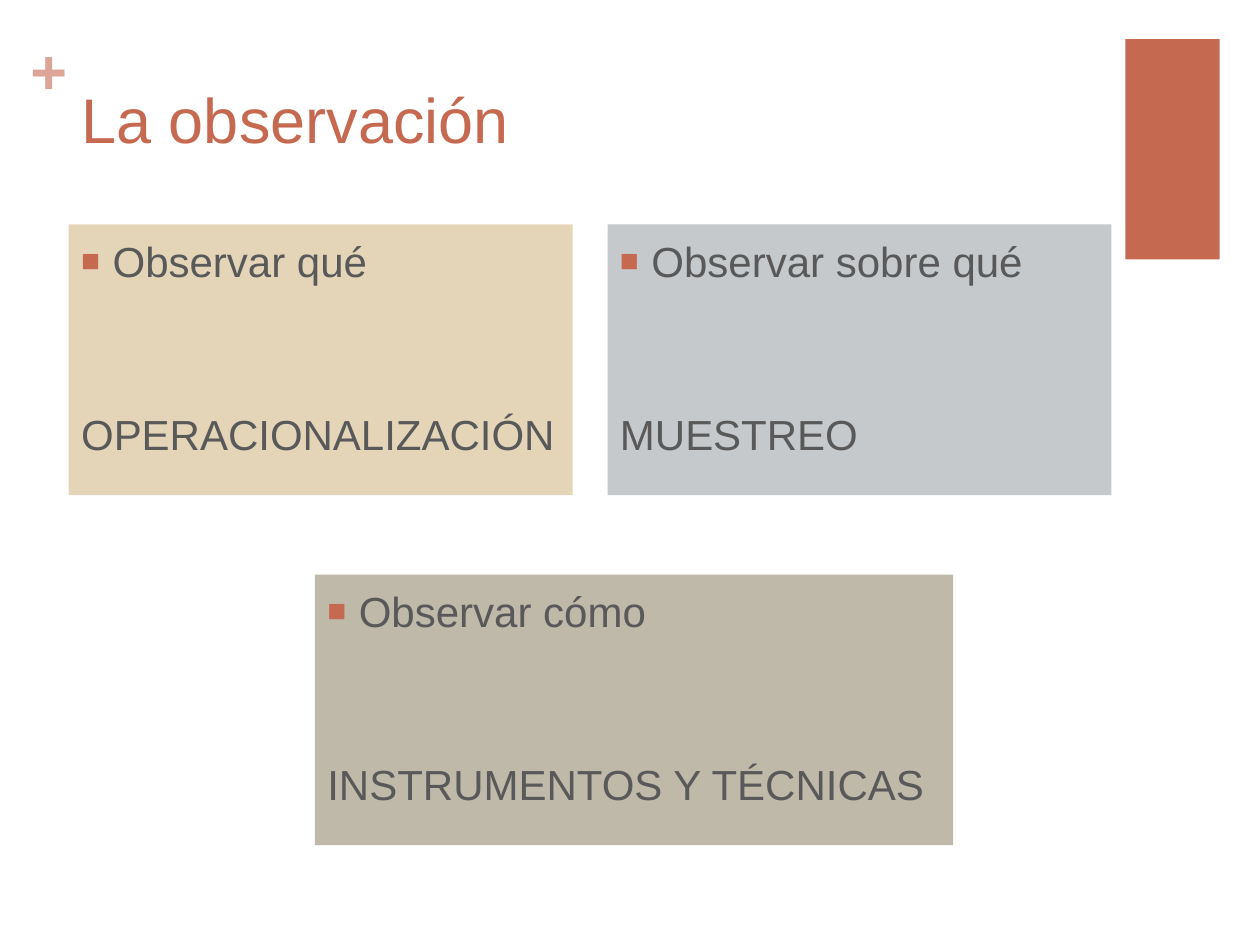
import pptx
import pptx.util
import pptx.dml.color
import pptx.enum.shapes
import pptx.enum.text
import pptx.oxml
import pptx.oxml.ns

Pt = pptx.util.Pt
FONT = "Arial"
COLORS = {
    "rust": "C66951",
    "pink": "DDA597",
    "gray": "595959",
    "sand": "E5D5B8",
    "steel": "C5C9CB",
    "stone": "BEB9A9",
}


def color(name):
    return pptx.dml.color.RGBColor.from_string(COLORS[name])


def add_run(para, text, size, tint, bold=False):
    run = para.add_run()
    run.text = text
    run.font.name = FONT
    run.font.size = Pt(size)
    run.font.bold = bold
    run.font.color.rgb = color(tint)


def add_label(slide, text, box, size, tint, inset, bold=False, spacing=1.0):
    frame = slide.shapes.add_textbox(*map(Pt, box)).text_frame
    frame.word_wrap = True
    frame.margin_left = frame.margin_right = Pt(2 * inset)
    frame.margin_top = frame.margin_bottom = Pt(inset)
    para = frame.paragraphs[0]
    para.line_spacing = spacing
    add_run(para, text, size, tint, bold)


def add_block(slide, box, tint):
    kind = pptx.enum.shapes.MSO_SHAPE.RECTANGLE
    shape = slide.shapes.add_shape(kind, *map(Pt, box))
    shape.shadow.inherit = False
    shape.fill.solid()
    shape.fill.fore_color.rgb = color(tint)
    shape.line.fill.background()
    return shape


def add_bullet(para):
    props = para._p.get_or_add_pPr()
    props.set("marL", str(Pt(18)))
    props.set("indent", str(Pt(-18)))
    space = pptx.oxml.ns.nsdecls("a")
    for mark in (
        f'<a:buClr {space}><a:srgbClr val="{COLORS["rust"]}"/></a:buClr>',
        f'<a:buSzPct {space} val="75000"/>',
        f'<a:buFont {space} typeface="{FONT}"/>',
        f'<a:buChar {space} char="■"/>',
    ):
        props.append(pptx.oxml.parse_xml(mark))


def add_card(slide, box, tint, topic, method):
    frame = add_block(slide, box, tint).text_frame
    frame.word_wrap = True
    frame.vertical_anchor = pptx.enum.text.MSO_ANCHOR.TOP
    head, foot = frame.paragraphs[0], frame.add_paragraph()
    for para, text in ((head, topic), (foot, method)):
        para.alignment = pptx.enum.text.PP_ALIGN.LEFT
        para.line_spacing = 1.1
        add_run(para, text, 24, "gray")
    foot.space_before = Pt(67.3)
    add_bullet(head)


def main():
    deck = pptx.Presentation()
    deck.slide_width, deck.slide_height = Pt(720), Pt(540)
    slide = deck.slides.add_slide(deck.slide_layouts[6])

    add_block(slide, (643, 22.3, 54, 126), "rust")
    add_label(slide, "+", (17.3, 18, 21, 44), 36, "pink", 0, bold=True)
    add_label(slide, "La observación", (39.5, 38.2, 594.7, 87.8), 36,
              "rust", 3.6, spacing=1.1)

    cards = (
        (347.2, 128.2, 288, "steel", "Observar sobre qué", "MUESTREO"),
        (39.3, 128.2, 288, "sand", "Observar qué", "OPERACIONALIZACIÓN"),
        (180, 328.3, 364.7, "stone", "Observar cómo",
         "INSTRUMENTOS Y TÉCNICAS"),
    )
    for left, top, width, tint, topic, method in cards:
        add_card(slide, (left, top, width, 154.7), tint, topic, method)

    deck.save("out.pptx")


if __name__ == "__main__":
    main()
